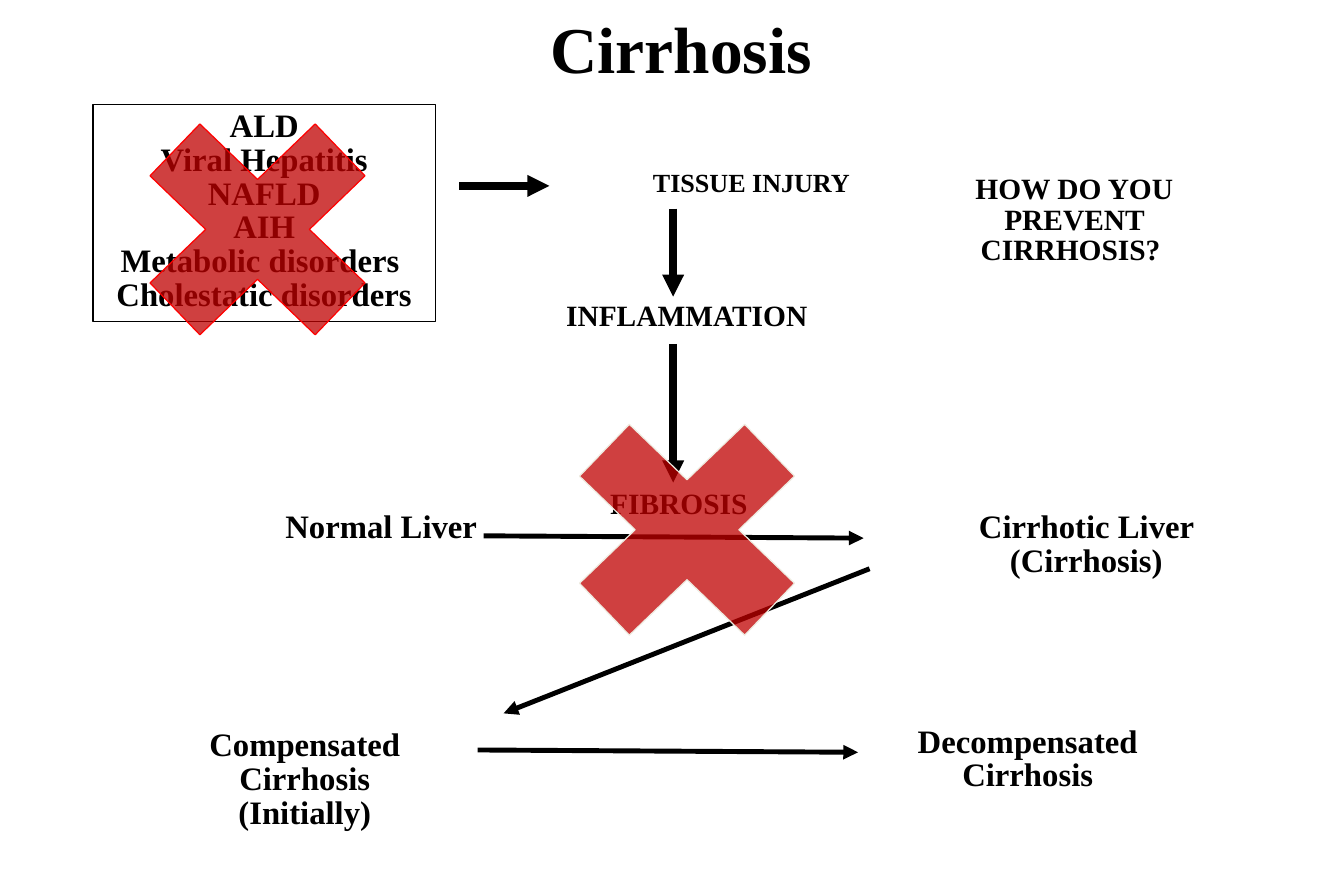
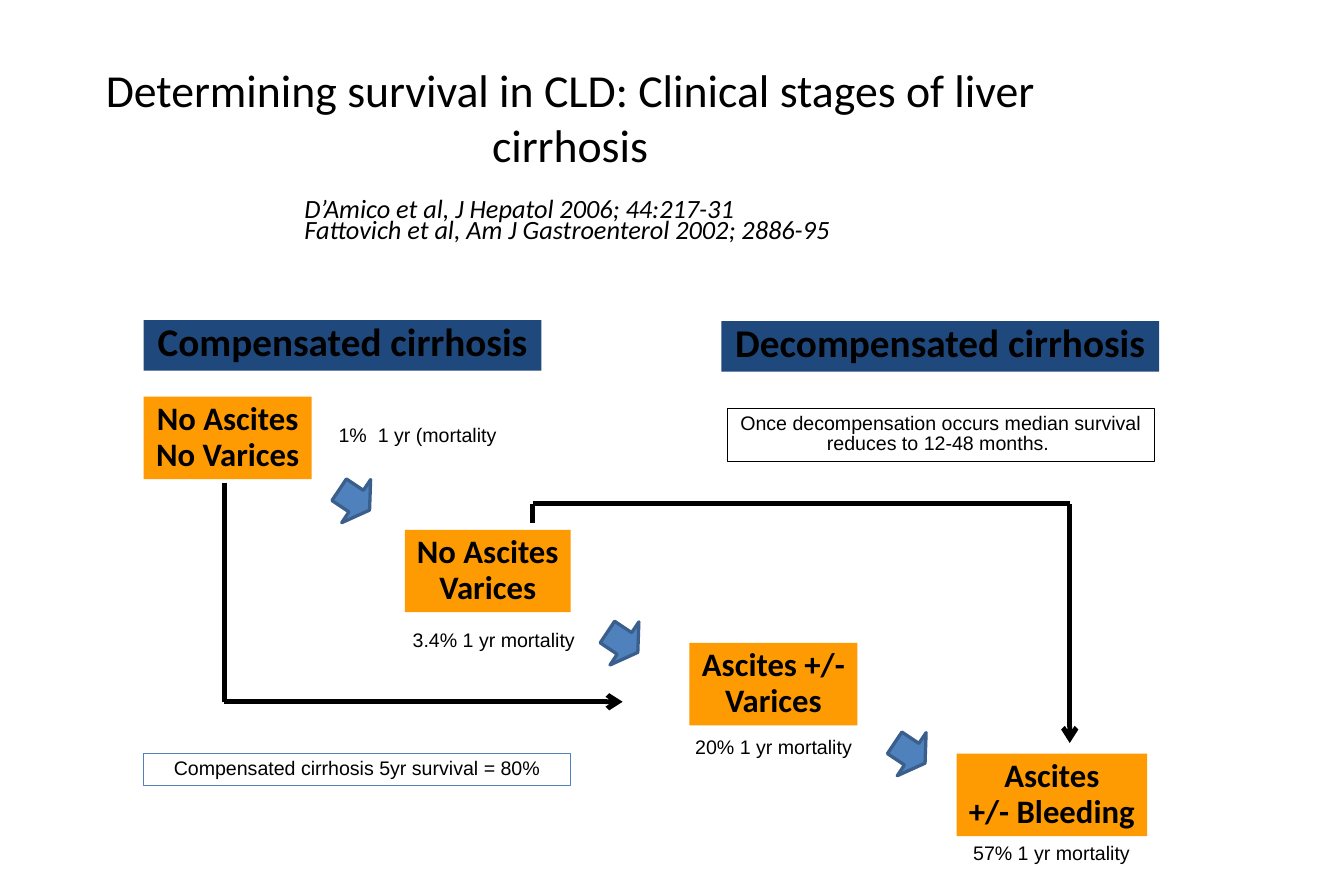
from itertools import pairwise

from lxml import etree
from pptx import Presentation
from pptx.dml.color import RGBColor
from pptx.enum.shapes import MSO_CONNECTOR, MSO_SHAPE
from pptx.enum.text import MSO_ANCHOR, PP_ALIGN
from pptx.oxml.ns import qn
from pptx.util import Cm, Pt

RECT, CROSS, DOWN = MSO_SHAPE.RECTANGLE, MSO_SHAPE.MATH_MULTIPLY, MSO_SHAPE.DOWN_ARROW
STRAIGHT = MSO_CONNECTOR.STRAIGHT
LEFT, CENTER = PP_ALIGN.LEFT, PP_ALIGN.CENTER
TOP, MIDDLE = MSO_ANCHOR.TOP, MSO_ANCHOR.MIDDLE

COLORS = {
    "ink": "000000", "navy": "1F497D", "orange": "FE9B03", "blue": "4F81BD",
    "steel": "3A5F8C", "crimson": "C00000", "red": "FF0000", "cream": "EEECE1",
}
SERIF = {"font": "Times New Roman", "bold": True}
SMALL = {"font": "Arial", "size": 12}
STAGE = {"font": "Calibri", "size": 20, "bold": True, "spacing": 0.9, "wrap": False}
HEADING = {**STAGE, "size": 24, "spacing": 0.8}


def color(name):
    """Return the named colour."""
    return RGBColor.from_string(COLORS[name])


def write(sp, text, font="Calibri", size=20, bold=False, italic=False, align=CENTER,
          anchor=TOP, spacing=0.86, before=0, wrap=True):
    """Write text into a shape, one paragraph for each line."""
    tf = sp.text_frame
    tf.word_wrap, tf.vertical_anchor = wrap, anchor
    for i, line in enumerate(text.split("\n")):
        p = tf.add_paragraph() if i else tf.paragraphs[0]
        p.alignment, p.line_spacing, p.space_before = align, spacing, Pt(before)
        r = p.add_run()
        r.text = line
        r.font.name, r.font.size = font, Pt(size)
        r.font.bold, r.font.italic = bold, italic
        r.font.color.rgb = color("ink")


def label(s, box, text, **fmt):
    """Add a text box."""
    write(s.shapes.add_textbox(*map(Cm, box)), text, **fmt)


def shape(s, kind, box, fill=None, line=None, width=0.75):
    """Add a preset shape with optional fill and outline."""
    sp = s.shapes.add_shape(kind, *map(Cm, box))
    sp.shadow.inherit = False
    if fill:
        sp.fill.solid()
        sp.fill.fore_color.rgb = color(fill)
    else:
        sp.fill.background()
    if line:
        sp.line.color.rgb = color(line)
        sp.line.width = Pt(width)
    else:
        sp.line.fill.background()
    return sp


def panel(s, box, text, fill=None, line=None, **fmt):
    """Add a rectangle that holds text."""
    write(shape(s, RECT, box, fill, line), text, **fmt)


def route(s, points, width=3, head="triangle"):
    """Join points with straight lines and end in an arrowhead."""
    for start, end in pairwise(points):
        c = s.shapes.add_connector(STRAIGHT, *map(Cm, (*start, *end)))
        c.line.color.rgb = color("ink")
        c.line.width = Pt(width)
        spPr = c.element.spPr
        if end == points[-1]:
            etree.SubElement(spPr.find(qn("a:ln")), qn("a:tailEnd"), type=head)
        etree.SubElement(spPr, qn("a:effectLst"))


def cross(s, x, y, line):
    """Add a translucent cross."""
    sp = shape(s, CROSS, (x, y, 6.86, 6.6), "crimson", line)
    rgb = sp.element.spPr.find(qn("a:solidFill"))[0]
    etree.SubElement(rgb, qn("a:alpha"), val="75000")


def pathway(s, x, y):
    """Place the column from injury to fibrosis."""
    label(s, (x + 0.28, y, 8, 0.84), "TISSUE INJURY", size=16, **SERIF)
    label(s, (x, y + 2.84, 5.77, 0.91), "INFLAMMATION", size=18, wrap=False, **SERIF)
    label(s, (x + 0.96, y + 6.9, 3.51, 0.91), "FIBROSIS", size=18, wrap=False, **SERIF)
    for x1, y1, x2, y2 in ((-2.03, 0.45, -0.08, 0.45), (2.59, 0.94, 2.59, 2.84),
                           (2.59, 3.86, 2.59, 6.85)):
        route(s, [(x + x1, y + y1), (x + x2, y + y2)], width=4.5)


def progression(s, x, y):
    """Place the four liver states and the arrows between them."""
    for dx, dy, w, h, text in (
        (1.65, 0, 7.42, 0.99, "Normal Liver"),
        (16.87, 0, 7.42, 1.73, "Cirrhotic Liver (Cirrhosis)"),
        (0, 4.7, 7.42, 2.46, "Compensated Cirrhosis\n(Initially)"),
        (16, 4.62, 6.63, 1.73, "Decompensated Cirrhosis"),
    ):
        label(s, (x + dx, y + dy, w, h), text, **SERIF)
    for x1, y1, x2, y2 in ((7.57, 0.64, 15.77, 0.69), (15.9, 1.35, 8, 4.47),
                           (7.44, 5.26, 15.65, 5.31)):
        route(s, [(x + x1, y + y1), (x + x2, y + y2)])


def stage(s, box, text, rate, rate_box):
    """Place a stage with its mortality, positioned from the stage corner."""
    x, y, w, h = box
    dx, dy, rate_w = rate_box
    panel(s, box, text, "orange", **STAGE)
    label(s, (x + dx, y + dy, rate_w, 0.69), rate, **SMALL)


def cirrhosis_slide(s):
    """Build the slide on causes and course."""
    label(s, (7.72, 0.3, 13.97, 1.73), "Cirrhosis", size=40, **SERIF)
    pathway(s, 11.94, 3.56)
    progression(s, 2.87, 10.92)
    panel(s, (2.01, 2.26, 7.39, 4.67),
          "ALD\nViral Hepatitis\nNAFLD\nAIH\nMetabolic disorders \nCholestatic disorders",
          line="ink", **SERIF)
    label(s, (20.65, 3.66, 5.08, 2.26), "HOW DO YOU PREVENT CIRRHOSIS? ", size=18, **SERIF)
    cross(s, 2.13, 1.65, "red")
    cross(s, 11.4, 8.13, "cream")


def survival_slide(s):
    """Build the slide on clinical stages."""
    label(s, (0.43, 0.92, 23.75, 3.18),
          "Determining survival in CLD: Clinical stages of liver cirrhosis",
          size=28, spacing=1.0, anchor=MIDDLE)
    label(s, (6.32, 4.32, 14.2, 1.07),
          "D’Amico et al, J Hepatol 2006; 44:217-31\n"
          "Fattovich et al, Am J Gastroenterol 2002; 2886-95",
          size=16.1, italic=True, align=LEFT, spacing=0.5, before=3.2)
    panel(s, (3.1, 6.91, 8.59, 1.09), "Compensated cirrhosis", "navy", **HEADING)
    panel(s, (15.57, 6.93, 9.45, 1.09), "Decompensated cirrhosis", "navy", **HEADING)
    for x, y, w, text, rate, rate_box in (
        (3.1, 8.56, 3.63, "No Ascites\nNo Varices", "1%  1 yr (mortality", (3.83, 0.51, 4.17)),
        (8.74, 11.43, 3.58, "No Ascites\nVarices", "3.4% 1 yr mortality", (-0.1, 2.06, 4.04)),
        (14.88, 13.87, 3.63, "Ascites +/-\nVarices", "20% 1 yr mortality", (-0.15, 1.93, 3.94)),
        (20.65, 16.26, 4.11, "Ascites\n+/- Bleeding", "57% 1 yr mortality", (0.08, 1.82, 3.94)),
    ):
        stage(s, (x, y, w, 1.78), text, rate, rate_box)
    for x, y in ((7.09, 10.39), (12.88, 13.46), (19.08, 15.85)):
        sp = shape(s, DOWN, (x, y, 1.12, 0.79), "blue", "steel", 2)
        sp.adjustments[0], sp.adjustments[1] = 0.5, 0.44
        sp.rotation = 303.8
    route(s, [(4.84, 10.41), (4.84, 15.14), (13.44, 15.14)], head="arrow")
    route(s, [(11.5, 11.28), (11.5, 10.87), (23.09, 10.87), (23.09, 16.03)], head="arrow")
    panel(s, (15.7, 8.81, 9.22, 1.14),
          "Once decompensation occurs median survival reduces to 12-48 months. ",
          line="ink", **SMALL)
    panel(s, (3.1, 16.26, 9.22, 0.69), "Compensated cirrhosis 5yr survival = 80%",
          line="blue", **SMALL)


def main():
    """Build and save the slides."""
    prs = Presentation()
    prs.slide_width, prs.slide_height = Cm(29.01), Cm(19.05)
    for build in (cirrhosis_slide, survival_slide):
        build(prs.slides.add_slide(prs.slide_layouts[6]))
    prs.save("out.pptx")


if __name__ == "__main__":
    main()
